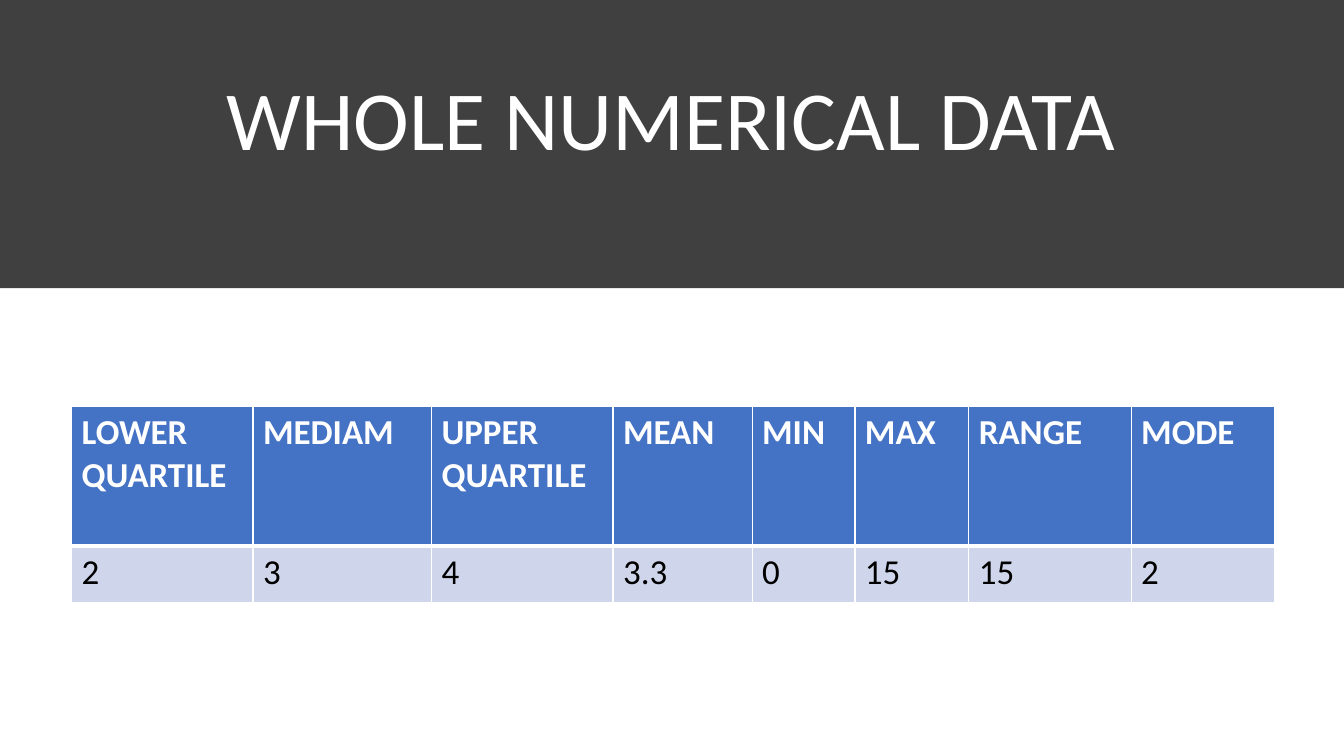
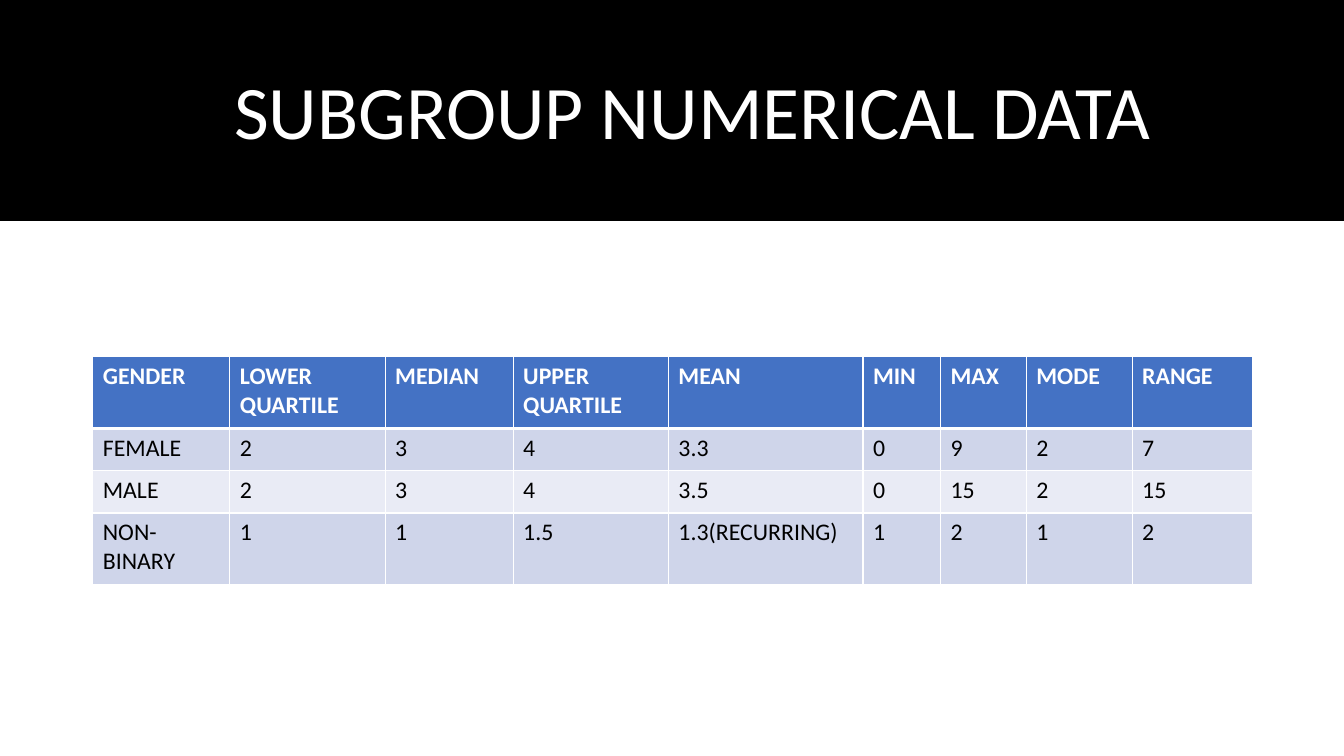
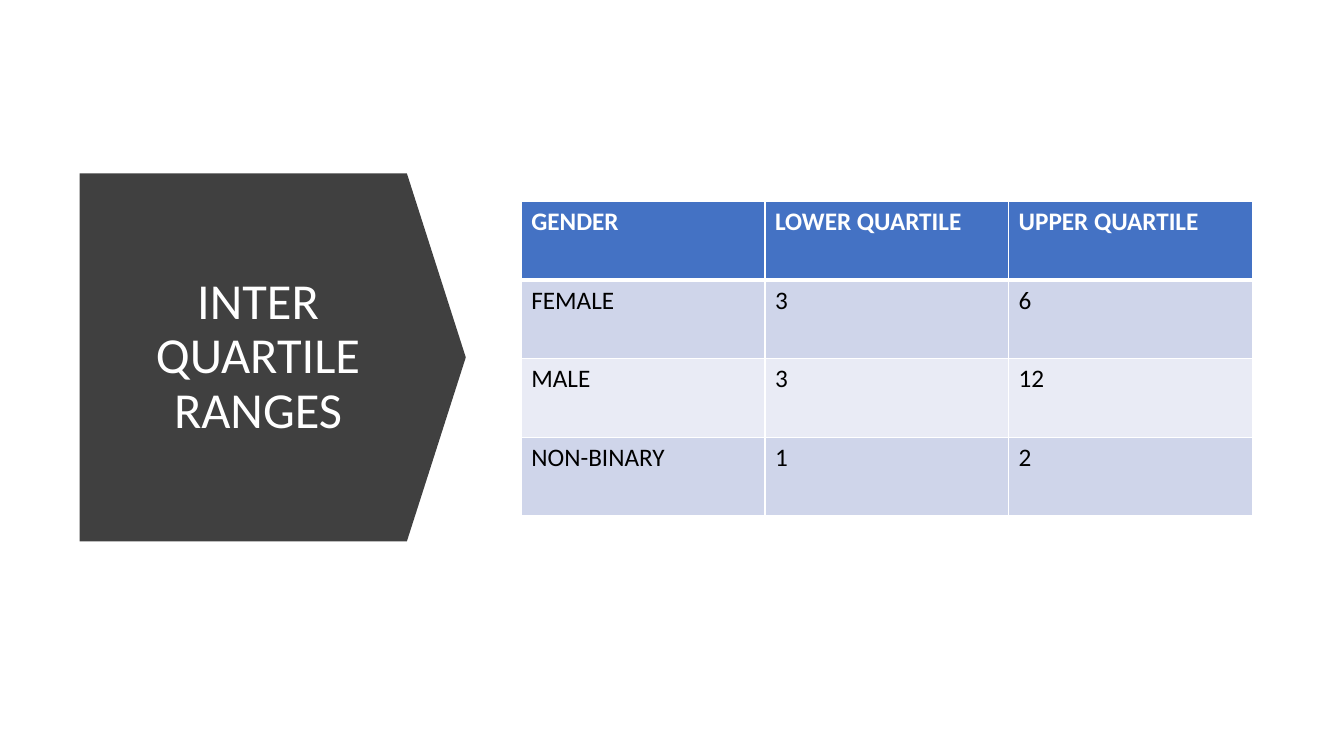
from lxml.etree import SubElement
from pptx import Presentation
from pptx.dml.color import RGBColor
from pptx.enum.shapes import MSO_SHAPE as Preset
from pptx.enum.text import MSO_ANCHOR as Anchor, MSO_AUTO_SIZE as AutoSize, PP_ALIGN as Align
from pptx.oxml.ns import qn
from pptx.util import Inches, Pt

FONT = "Calibri"
WHITE = RGBColor(0xFF, 0xFF, 0xFF)
BLACK = RGBColor(0x00, 0x00, 0x00)
CHARCOAL = RGBColor(0x40, 0x40, 0x40)
HEADER_BLUE = RGBColor(0x44, 0x72, 0xC4)
BAND_DARK = RGBColor(0xCF, 0xD5, 0xEA)
BAND_LIGHT = RGBColor(0xE9, 0xEB, 0xF5)
SLIDE_WIDTH, SLIDE_HEIGHT = 13.33, 7.5
TITLE_ONLY = 5
THIN, THICK = 1, 3


def set_font(paragraph, size, color, bold=False):
    """Format every run of a paragraph."""
    for run in paragraph.runs:
        font = run.font
        font.name, font.size, font.bold = FONT, Pt(size), bold
        font.color.rgb = color


def add_panel(slide, preset, box, color):
    """Add a plain filled shape that carries the title."""
    panel = slide.shapes.add_shape(preset, *map(Inches, box))
    panel.shadow.inherit = False
    panel.fill.solid()
    panel.fill.fore_color.rgb = color
    panel.line.fill.background()
    return panel


def place_title(slide, text, box, size, anchor):
    """Place the title in its box, in front of the panel."""
    title = slide.shapes.title
    title.left, title.top, title.width, title.height = map(Inches, box)
    frame = title.text_frame
    frame.text = text
    frame.word_wrap = True
    frame.auto_size = AutoSize.NONE
    frame.vertical_anchor = anchor
    paragraph = frame.paragraphs[0]
    paragraph.alignment = Align.CENTER
    paragraph.line_spacing = 0.9
    set_font(paragraph, size, WHITE)
    title.element.getparent().append(title.element)


def set_borders(cell, top, bottom):
    """Draw white borders around a table cell."""
    properties = cell._tc.get_or_add_tcPr()
    for side, width in (("L", THIN), ("R", THIN), ("T", top), ("B", bottom)):
        line = SubElement(properties, qn(f"a:ln{side}"), w=str(Pt(width)))
        fill = SubElement(line, qn("a:solidFill"))
        SubElement(fill, qn("a:srgbClr"), val=str(WHITE))


def add_banded_table(slide, left, top, widths, heights, rows, size):
    """Add a table with a blue header and banded rows."""
    box = map(Inches, (left, top, sum(widths), sum(heights)))
    table = slide.shapes.add_table(len(rows), len(widths), *box).table
    for column, width in zip(table.columns, widths):
        column.width = Inches(width)
    for index, (height, values) in enumerate(zip(heights, rows)):
        table.rows[index].height = Inches(height)
        header = index == 0
        band = BAND_DARK if index % 2 else BAND_LIGHT
        for cell, value in zip(table.rows[index].cells, values):
            cell.text = value
            set_borders(cell, THICK if index == 1 else THIN, THICK if header else THIN)
            cell.fill.solid()
            cell.fill.fore_color.rgb = HEADER_BLUE if header else band
            for paragraph in cell.text_frame.paragraphs:
                set_font(paragraph, size, WHITE if header else BLACK, header)


def add_whole_data_slide(slide):
    """Build the summary of the whole data set."""
    add_panel(slide, Preset.RECTANGLE, (0, 0, SLIDE_WIDTH, 2.86), CHARCOAL)
    place_title(slide, "WHOLE NUMERICAL DATA", (0.77, 0.4, 11.77, 1.32), 60, Anchor.BOTTOM)
    rows = [
        ("LOWER\nQUARTILE", "MEDIAM", "UPPER\nQUARTILE", "MEAN", "MIN", "MAX", "RANGE", "MODE"),
        ("2", "3", "4", "3.3", "0", "15", "15", "2"),
    ]
    widths = (1.8, 1.77, 1.8, 1.38, 1.02, 1.13, 1.61, 1.42)
    add_banded_table(slide, 0.71, 4.03, widths, (1.39, 0.56), rows, 25)


def add_subgroup_slide(slide):
    """Build the summary for each gender."""
    band = add_panel(slide, Preset.RECTANGLE, (0, 0, SLIDE_WIDTH, 2.19), BLACK)
    band.line.color.rgb = BLACK
    band.line.width = Pt(1)
    place_title(slide, "SUBGROUP NUMERICAL DATA", (1.12, 0.58, 11.5, 1.02), 54, Anchor.BOTTOM)
    rows = [
        ("GENDER", "LOWER\nQUARTILE", "MEDIAN", "UPPER QUARTILE", "MEAN",
         "MIN", "MAX", "MODE", "RANGE"),
        ("FEMALE", "2", "3", "4", "3.3", "0", "9", "2", "7"),
        ("MALE", "2", "3", "4", "3.5", "0", "15", "2", "15"),
        ("NON-BINARY", "1", "1", "1.5", "1.3(RECURRING)", "1", "2", "1", "2"),
    ]
    widths = (1.36, 1.54, 1.27, 1.54, 1.93, 0.77, 0.85, 1.05, 1.19)
    add_banded_table(slide, 0.92, 3.54, widths, (0.71, 0.42, 0.42, 0.71), rows, 17)


def add_quartile_slide(slide):
    """Build the quartile table beside an arrow title."""
    arrow = add_panel(slide, Preset.DOWN_ARROW, (0.88, 1.63, 3.65, 3.83), CHARCOAL)
    arrow.rotation = 270
    arrow.adjustments[0] = 1
    arrow.adjustments[1] = 0.16
    place_title(slide, "INTER QUARTILE RANGES", (1.12, 2.15, 2.88, 2.79), 36, Anchor.MIDDLE)
    rows = [
        ("GENDER", "LOWER QUARTILE", "UPPER QUARTILE"),
        ("FEMALE", "3", "6"),
        ("MALE", "3", "12"),
        ("NON-BINARY", "1", "2"),
    ]
    add_banded_table(slide, 5.17, 2, [7.25 / 3] * 3, [0.78] * 4, rows, 18)


def main():
    """Build and save the presentation."""
    presentation = Presentation()
    presentation.slide_width = Inches(SLIDE_WIDTH)
    presentation.slide_height = Inches(SLIDE_HEIGHT)
    layout = presentation.slide_layouts[TITLE_ONLY]
    for build in (add_whole_data_slide, add_subgroup_slide, add_quartile_slide):
        build(presentation.slides.add_slide(layout))
    presentation.save("out.pptx")


if __name__ == "__main__":
    main()
